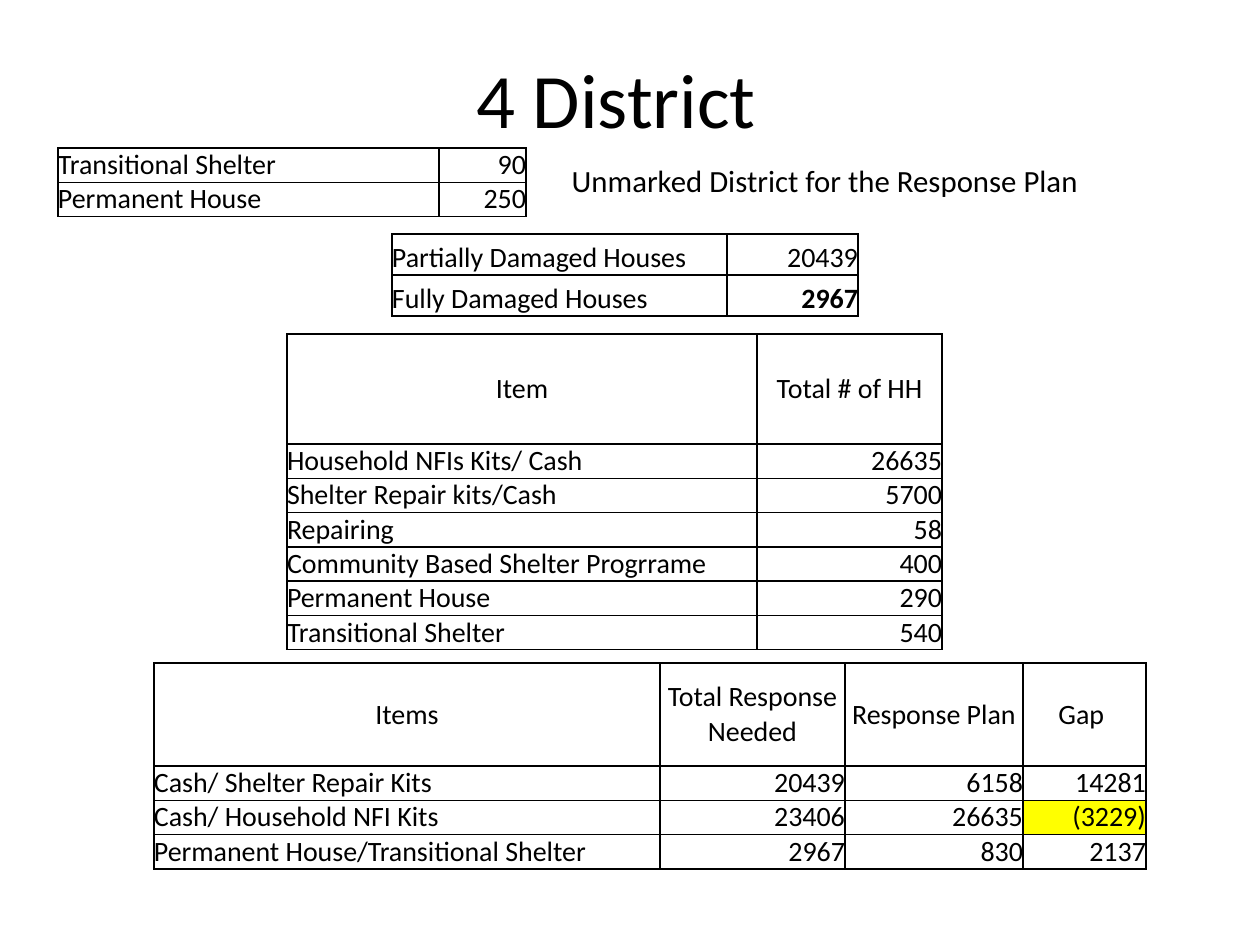
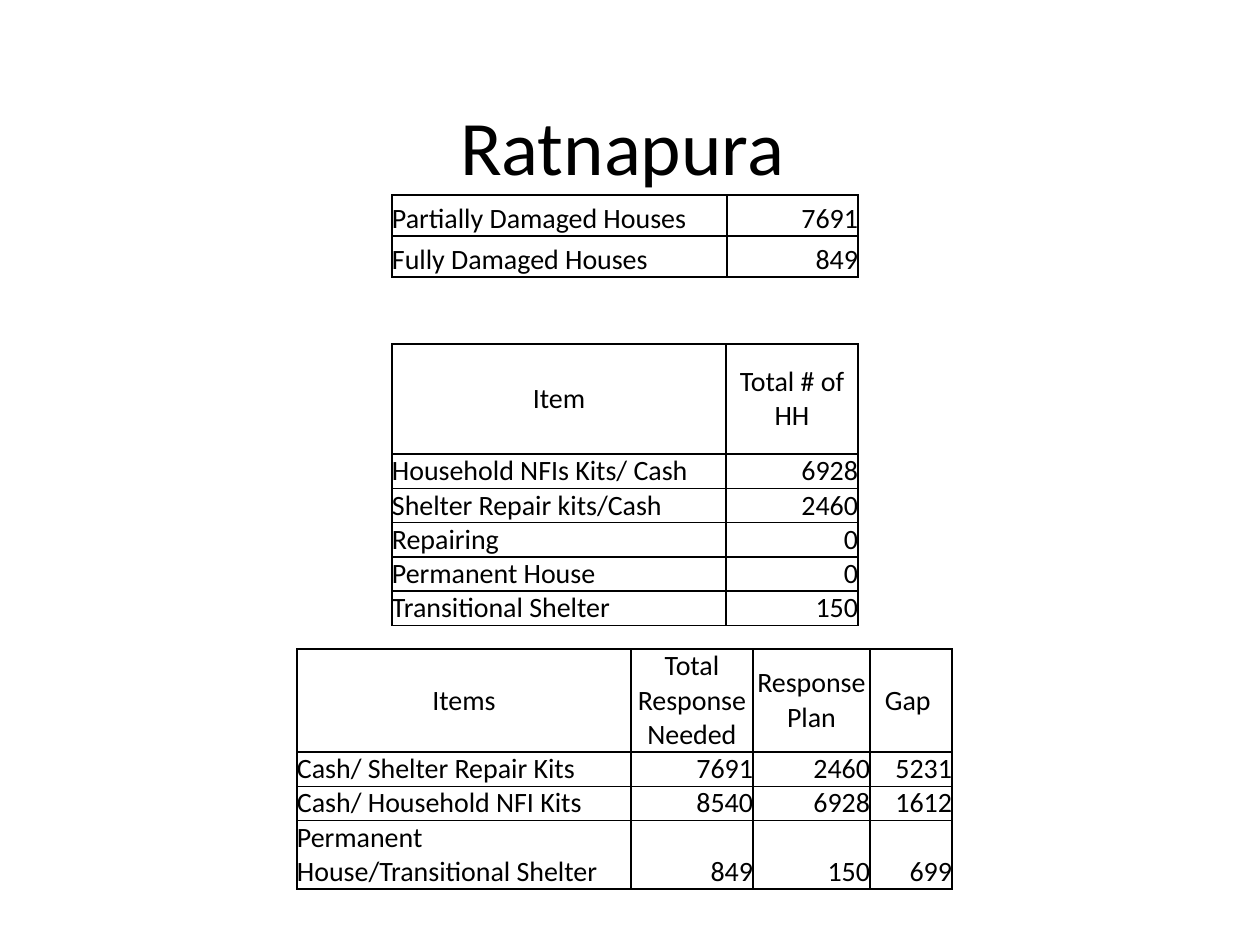
"""Build two slides comparing shelter needs with the response plan by district."""
from dataclasses import dataclass

import pptx
import pptx.dml.color
import pptx.enum.text
import pptx.oxml
import pptx.oxml.ns
import pptx.presentation
import pptx.slide
import pptx.text.text
import pptx.util

EMU_PER_PX = 914400 / 126
SLIDE_SIZE = (1260, 945)
TITLE_SIZE = (1134, 158)
ROW_HEIGHT = 34
FONT = "Calibri"
INK, PAPER, ALERT = "000000", "FFFFFF", "FFFF00"
ALIGN = pptx.enum.text.PP_ALIGN
ANCHOR = pptx.enum.text.MSO_ANCHOR
TITLE_ONLY = 5


@dataclass(frozen=True)
class Grid:
    """Table with its place, column widths and row rules."""
    left: int
    top: int
    columns: tuple[int, ...]
    rows: tuple[tuple[str, ...], ...]
    header_height: int = 0
    row_height: int = ROW_HEIGHT
    anchor: ANCHOR = ANCHOR.MIDDLE
    fill: str | None = None
    bold: str | None = None
    alert: str | None = None


@dataclass(frozen=True)
class Note:
    """Free text with its box."""
    text: str
    box: tuple[int, int, int, int]


@dataclass(frozen=True)
class District:
    """One slide: title, tables and an optional note."""
    title: str
    title_at: tuple[int, int]
    grids: tuple[Grid, ...]
    note: Note | None = None


def px(length: int) -> pptx.util.Emu:
    """Convert px to EMU."""
    return pptx.util.Emu(round(length * EMU_PER_PX))


def color(code: str) -> pptx.dml.color.RGBColor:
    """Turn a hex string into a colour."""
    return pptx.dml.color.RGBColor.from_string(code)


def write(frame: pptx.text.text.TextFrame, text: str, *, size: float = 16,
          align: ALIGN = ALIGN.CENTER, bold: bool = False) -> None:
    """Put formatted text into a frame."""
    frame.word_wrap = True
    paragraph = frame.paragraphs[0]
    paragraph.alignment = align
    run = paragraph.add_run()
    run.text = text
    run.font.name = FONT
    run.font.size = pptx.util.Pt(size)
    run.font.bold = bold
    run.font.color.rgb = color(INK)


def add_borders(cell) -> None:
    """Draw a thin line on each side of a cell."""
    properties = cell._tc.get_or_add_tcPr()
    for side in ("lnL", "lnR", "lnT", "lnB"):
        properties.append(pptx.oxml.parse_xml(
            f'<a:{side} {pptx.oxml.ns.nsdecls("a")} w="{pptx.util.Pt(1)}">'
            f'<a:solidFill><a:srgbClr val="{INK}"/></a:solidFill></a:{side}>'))


def draw_grid(slide: pptx.slide.Slide, grid: Grid) -> None:
    """Draw one table: centred header, labels left, figures right."""
    heights = [grid.row_height] * len(grid.rows)
    if grid.header_height:
        heights[0] = grid.header_height
    table = slide.shapes.add_table(
        len(grid.rows), len(grid.columns), px(grid.left), px(grid.top),
        px(sum(grid.columns)), px(sum(heights))).table
    table.first_row = table.horz_banding = False
    for column, width in zip(table.columns, grid.columns):
        column.width = px(width)
    for r, (row, height) in enumerate(zip(grid.rows, heights)):
        table.rows[r].height = px(height)
        is_header = r == 0 and grid.header_height > 0
        for c, text in enumerate(row):
            cell = table.cell(r, c)
            cell.margin_left = cell.margin_right = 0
            cell.margin_top = cell.margin_bottom = 0
            cell.vertical_anchor = ANCHOR.MIDDLE if is_header else grid.anchor
            add_borders(cell)
            fill = ALERT if text == grid.alert else grid.fill
            if fill:
                cell.fill.solid()
                cell.fill.fore_color.rgb = color(fill)
            else:
                cell.fill.background()
            body_align = ALIGN.RIGHT if c else ALIGN.LEFT
            write(cell.text_frame, text, bold=text == grid.bold,
                  align=ALIGN.CENTER if is_header else body_align)


def draw_note(slide: pptx.slide.Slide, note: Note) -> None:
    """Draw a centred text box."""
    frame = slide.shapes.add_textbox(*map(px, note.box)).text_frame
    frame.vertical_anchor = ANCHOR.MIDDLE
    write(frame, note.text, size=17.6)


def draw_district(deck: pptx.presentation.Presentation, district: District) -> None:
    """Add the slide of one district."""
    slide = deck.slides.add_slide(deck.slide_layouts[TITLE_ONLY])
    title = slide.shapes.title
    title.left, title.top = map(px, district.title_at)
    title.width, title.height = map(px, TITLE_SIZE)
    title.text_frame.vertical_anchor = ANCHOR.MIDDLE
    write(title.text_frame, district.title, size=44)
    for grid in district.grids:
        draw_grid(slide, grid)
    if district.note:
        draw_note(slide, district.note)


def damage(top: int, partial: str, full: str, bold: str | None = None) -> Grid:
    """Describe the table of damaged houses."""
    return Grid(392, top, (335, 131),
                (("Partially Damaged Houses", partial), ("Fully Damaged Houses", full)),
                row_height=41, anchor=ANCHOR.BOTTOM, bold=bold)


def assistance(left: int, top: int, columns: tuple[int, ...],
               rows: tuple[tuple[str, str], ...]) -> Grid:
    """Describe the table of households per item."""
    return Grid(left, top, columns, (("Item", "Total # of HH"), *rows), header_height=110)


def response_gap(left: int, top: int, columns: tuple[int, ...],
                 repair: tuple[str, ...], household: tuple[str, ...],
                 housing: tuple[str, ...], alert: str | None = None) -> Grid:
    """Describe the table of needs, plan and gap."""
    rows = (("Items", "Total Response Needed", "Response Plan", "Gap "),
            ("Cash/ Shelter Repair Kits", *repair),
            ("Cash/ Household NFI Kits", *household),
            ("Permanent House/Transitional Shelter", *housing))
    return Grid(left, top, columns, rows, header_height=103,
                anchor=ANCHOR.BOTTOM, alert=alert)


DISTRICTS = (
    District("4 District ", (58, 19), (
        assistance(287, 334, (470, 185), (
            ("Household NFIs Kits/ Cash", "26635"),
            ("Shelter Repair kits/Cash", "5700"),
            ("Repairing", "58"),
            ("Community Based Shelter Progrrame", "400"),
            ("Permanent House", "290"),
            ("Transitional Shelter", "540"))),
        damage(234, "20439", "2967", bold="2967"),
        response_gap(154, 663, (506, 185, 178, 123),
                     ("20439", "6158", "14281"), ("23406", "26635", "(3229)"),
                     ("2967", "830", "2137"), alert="(3229)"),
        Grid(58, 148, (381, 87),
             (("Transitional Shelter", "90"), ("Permanent House", "250")), fill=PAPER),
    ), Note("Unmarked District for the Response Plan", (525, 152, 600, 57))),
    District("Ratnapura ", (64, 66), (
        assistance(392, 344, (334, 132), (
            ("Household NFIs Kits/ Cash", "6928"),
            ("Shelter Repair kits/Cash", "2460"),
            ("Repairing", "0"),
            ("Permanent House", "0"),
            ("Transitional Shelter", "150"))),
        damage(195, "7691", "849"),
        response_gap(297, 649, (334, 122, 117, 82),
                     ("7691", "2460", "5231"), ("8540", "6928", "1612"),
                     ("849", "150", "699")),
    )),
)


def main() -> None:
    """Build and save the deck."""
    deck = pptx.Presentation()
    deck.slide_width, deck.slide_height = map(px, SLIDE_SIZE)
    for district in DISTRICTS:
        draw_district(deck, district)
    deck.save("out.pptx")


if __name__ == "__main__":
    main()
